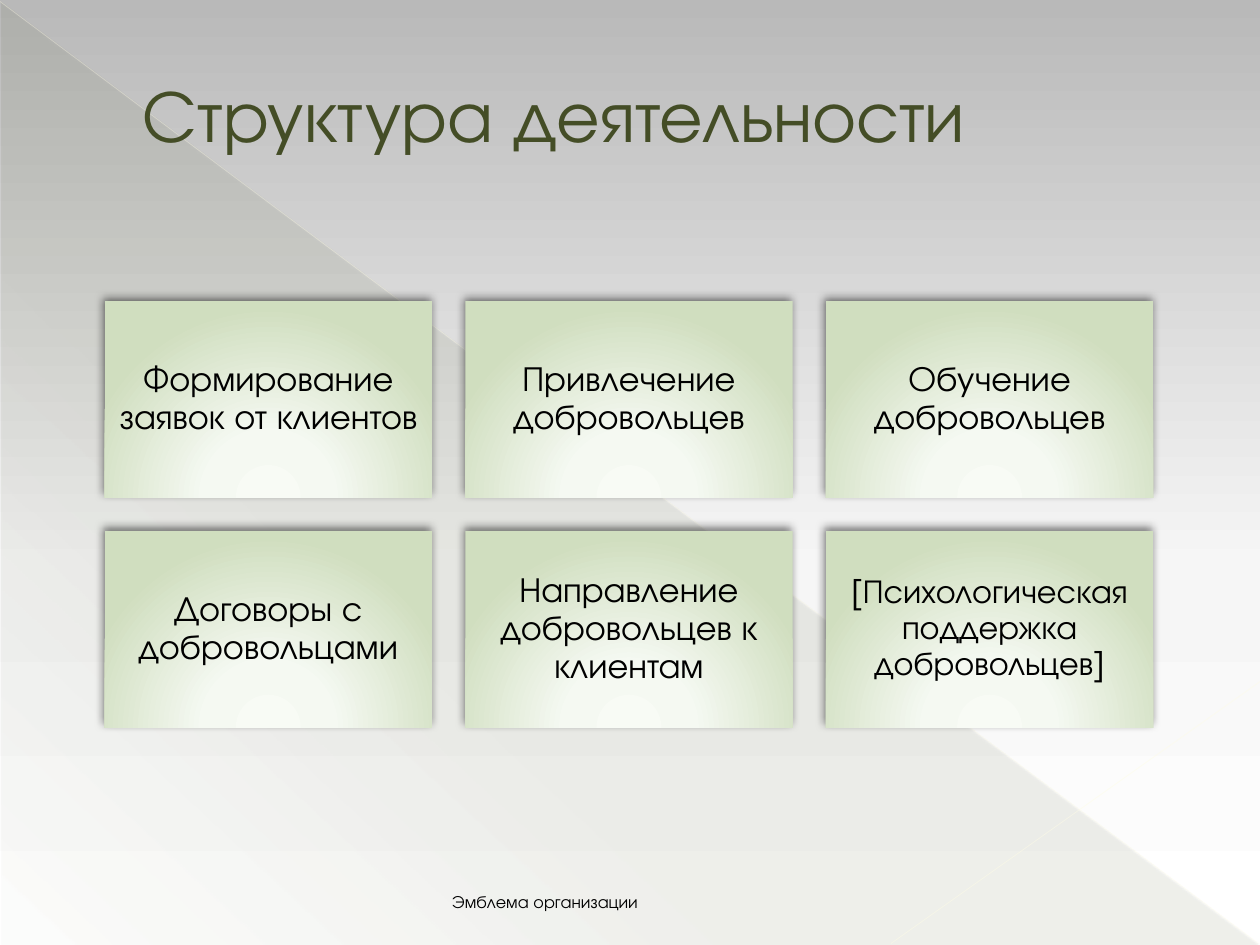
from dataclasses import dataclass

import pptx
import pptx.dml.color
import pptx.enum.shapes
import pptx.enum.text
import pptx.oxml
import pptx.oxml.ns
import pptx.util
from pptx.util import Cm


@dataclass(frozen=True)
class Stop:
    position: int
    color: str
    opacity: int = 100


@dataclass(frozen=True)
class Theme:
    font: str = "TeX Gyre Adventor"
    title_color: str = "444D26"
    text_color: str = "000000"
    title_size: int = 42
    card_size: int = 20
    footer_size: int = 10
    background: tuple = (Stop(0, "B9B9B9"), Stop(60, "F6F6F6"), Stop(100, "FFFFFF"))
    wedge: tuple = (Stop(0, "444D26", 10), Stop(70, "444D26", 8), Stop(100, "444D26", 1))
    card: tuple = (Stop(0, "F8FBF5"), Stop(34, "F5F9F2"), Stop(100, "D0DEBF"))


@dataclass(frozen=True)
class Activity:
    label: str
    size: int


@dataclass(frozen=True)
class Ray:
    start: tuple
    end: tuple
    color: str
    width: float
    opacity: int


THEME = Theme()
NS = pptx.oxml.ns.nsdecls("a")
GLOW = '<a:path path="circle"><a:fillToRect l="50000" t="155000" r="50000" b="-55000"/></a:path>'
SHADOW = (
    f'<a:outerShdw {NS} blurRad="63500" dist="25400" dir="14700000" algn="t" rotWithShape="0">'
    '<a:srgbClr val="000000"><a:alpha val="50000"/></a:srgbClr></a:outerShdw>'
)

ACTIVITIES = (
    Activity("Формирование заявок от клиентов", THEME.card_size),
    Activity("Привлечение добровольцев", THEME.card_size),
    Activity("Обучение добровольцев", THEME.card_size),
    Activity("Договоры с добровольцами", THEME.card_size),
    Activity("Направление добровольцев к клиентам", THEME.card_size),
    Activity("[Психологическая поддержка добровольцев]", THEME.card_size - 1),
)
RAYS = (
    Ray((0, 0.03), (25.37, 19.02), "FFFDE3", 0.39, 35),
    Ray((25.4, 13.74), (17.96, 19.02), "FFFDE6", 0.47, 45),
)

# Card grid, in centimetres
COLUMNS = 3
GRID_LEFT, GRID_TOP = 2.11, 6.07
CARD_WIDTH, CARD_HEIGHT = 6.6, 3.96
GAP = 0.67


def linear(degrees: int) -> str:
    return f'<a:lin ang="{degrees * 60000}" scaled="0"/>'


def set_gradient(fill, owner, stops: tuple, direction: str) -> None:
    """Put a gradient in the place of the owner's solid fill."""
    fill.solid()
    solid = next(owner.iter(pptx.oxml.ns.qn("a:solidFill")))
    marks = "".join(
        f'<a:gs pos="{stop.position * 1000}"><a:srgbClr val="{stop.color}">'
        f'<a:alpha val="{stop.opacity * 1000}"/></a:srgbClr></a:gs>'
        for stop in stops
    )
    gradient = pptx.oxml.parse_xml(
        f'<a:gradFill {NS} rotWithShape="1"><a:gsLst>{marks}</a:gsLst>{direction}</a:gradFill>'
    )
    solid.getparent().replace(solid, gradient)


def write(frame, text: str, size: int, color: str, align, anchor) -> None:
    frame.text = text
    frame.word_wrap = True
    frame.vertical_anchor = anchor
    paragraph = frame.paragraphs[0]
    paragraph.alignment = align
    font = paragraph.runs[0].font
    font.name = THEME.font
    font.size = pptx.util.Pt(size)
    font.color.rgb = pptx.dml.color.RGBColor.from_string(color)


def draw_ray(slide, ray: Ray) -> None:
    points = [Cm(value) for value in ray.start + ray.end]
    line = slide.shapes.add_connector(pptx.enum.shapes.MSO_CONNECTOR.STRAIGHT, *points)
    line.line.width = pptx.util.Pt(ray.width)
    line.line.color.rgb = pptx.dml.color.RGBColor.from_string(ray.color)
    properties = line._element.spPr
    color = next(properties.iter(pptx.oxml.ns.qn("a:srgbClr")))
    color.append(pptx.oxml.parse_xml(f'<a:alpha {NS} val="{ray.opacity * 1000}"/>'))
    properties.append(pptx.oxml.parse_xml(f"<a:effectLst {NS}/>"))


def draw_shape(slide, kind, box: tuple, stops: tuple, direction: str):
    shape = slide.shapes.add_shape(kind, *(Cm(value) for value in box))
    set_gradient(shape.fill, shape._element.spPr, stops, direction)
    shape.line.fill.background()
    shape.shadow.inherit = False
    return shape


def draw_card(slide, index: int, activity: Activity) -> None:
    row, column = divmod(index, COLUMNS)
    box = (
        GRID_LEFT + column * (CARD_WIDTH + GAP),
        GRID_TOP + row * (CARD_HEIGHT + GAP),
        CARD_WIDTH,
        CARD_HEIGHT,
    )
    card = draw_shape(slide, pptx.enum.shapes.MSO_SHAPE.RECTANGLE, box, THEME.card, GLOW)
    effects = card._element.spPr.find(pptx.oxml.ns.qn("a:effectLst"))
    effects.append(pptx.oxml.parse_xml(SHADOW))
    frame = card.text_frame
    frame.margin_left = frame.margin_right = frame.margin_top = frame.margin_bottom = Cm(0.2)
    write(frame, activity.label, activity.size, THEME.text_color,
          pptx.enum.text.PP_ALIGN.CENTER, pptx.enum.text.MSO_ANCHOR.MIDDLE)
    frame.paragraphs[0].line_spacing = 0.9


def main() -> None:
    deck = pptx.Presentation()
    deck.slide_width, deck.slide_height = Cm(25.4), Cm(19.05)
    slide = deck.slides.add_slide(deck.slide_layouts.get_by_name("Title Only"))

    # Backdrop
    set_gradient(slide.background.fill, slide._element, THEME.background, linear(90))
    draw_shape(slide, pptx.enum.shapes.MSO_SHAPE.RIGHT_TRIANGLE,
               (0.03, 0.05, 25.35, 19), THEME.wedge, linear(133))
    for ray in RAYS:
        draw_ray(slide, ray)

    # Activities
    for index, activity in enumerate(ACTIVITIES):
        draw_card(slide, index, activity)

    # Title, brought in front of the backdrop
    title = slide.shapes.title
    slide.shapes._spTree.append(title._element)
    title.left, title.top, title.width, title.height = Cm(1.27), Cm(0.74), Cm(22.86), Cm(3.07)
    write(title.text_frame, "Структура деятельности", THEME.title_size, THEME.title_color,
          pptx.enum.text.PP_ALIGN.LEFT, pptx.enum.text.MSO_ANCHOR.MIDDLE)
    title.text_frame.paragraphs[0]._p.get_or_add_pPr().set("marL", str(Cm(1.35)))

    # Footer
    footer = slide.shapes.add_textbox(Cm(1.27), Cm(17.68), Cm(11.84), Cm(0.84))
    write(footer.text_frame, "Эмблема организации", THEME.footer_size, THEME.text_color,
          pptx.enum.text.PP_ALIGN.RIGHT, pptx.enum.text.MSO_ANCHOR.BOTTOM)

    deck.save("out.pptx")


if __name__ == "__main__":
    main()
